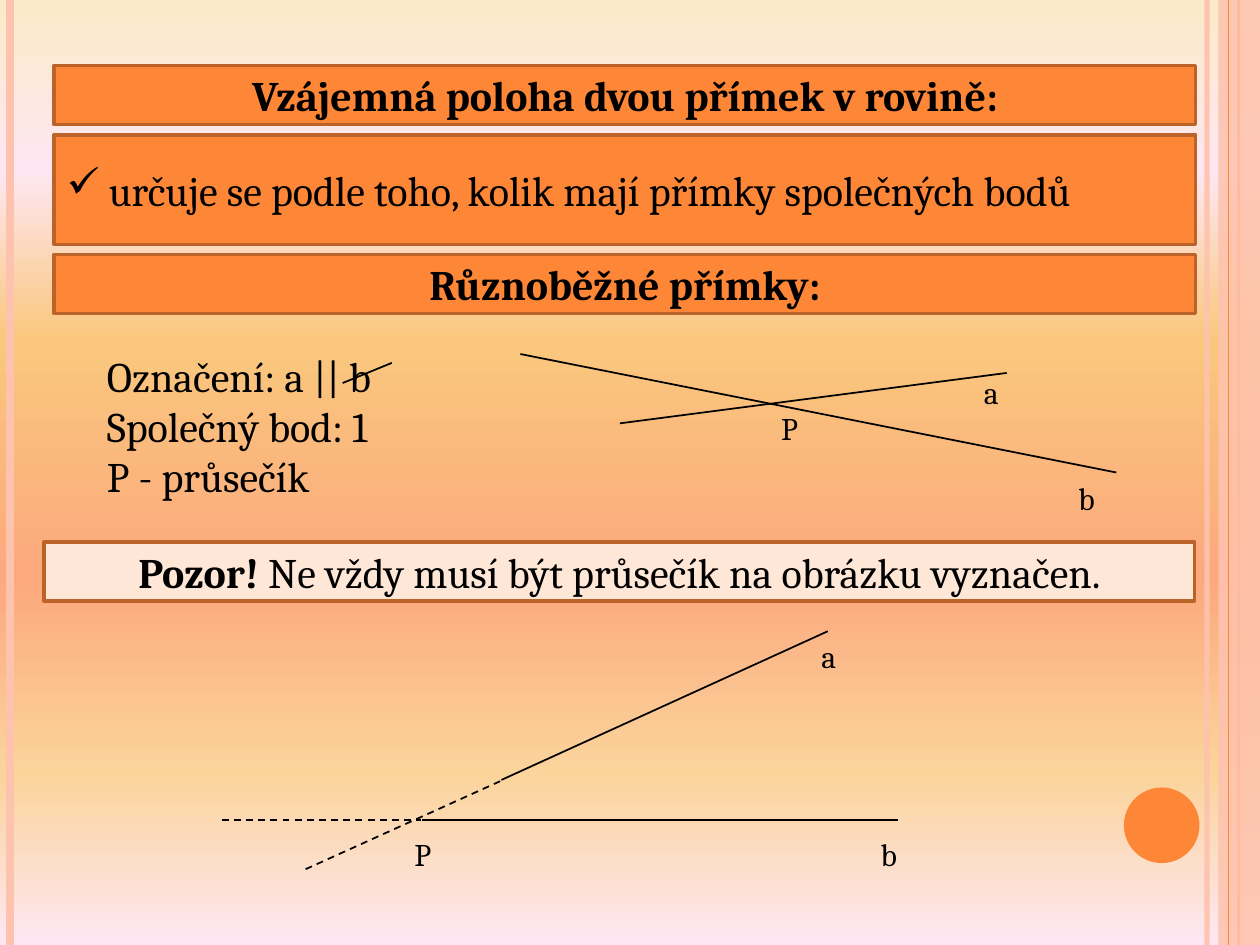
from lxml.etree import SubElement
from pptx import Presentation
from pptx.dml.color import RGBColor
from pptx.enum.dml import MSO_LINE
from pptx.enum.shapes import MSO_CONNECTOR, MSO_SHAPE
from pptx.enum.text import MSO_ANCHOR, MSO_AUTO_SIZE, PP_ALIGN
from pptx.oxml.ns import qn
from pptx.util import Inches, Pt

FONT = "Cambria"
COLORS = {"orange": "FE8637", "brown": "BC6329", "peach": "FEC3AE",
          "pale": "FFE7D7", "black": "000000"}
STOPS = [(0, "FBEAC7"), (18, "FEE7F2"), (36, "FAC77D"),
         (61, "FBA97D"), (82, "FBD49C"), (100, "FEE7F2")]


def rgb(name):
    return RGBColor.from_string(COLORS[name])


def fade(fill, percent):
    """Set the opacity of a solid fill already on the element."""
    color = next(fill.iter(qn("a:srgbClr")))
    SubElement(color, qn("a:alpha")).set("val", str(percent * 1000))


def backdrop(slide):
    fill = slide.background.fill
    fill.gradient()
    fill.gradient_angle = 270
    stops = next(slide.element.iter(qn("a:gsLst")))
    for old in list(stops):
        stops.remove(old)
    for place, color in STOPS:
        stop = SubElement(stops, qn("a:gs"), pos=str(place * 1000))
        SubElement(stop, qn("a:srgbClr"), val=color)


def line(slide, x1, y1, x2, y2, color="black", width=1, dash=False, alpha=None):
    link = slide.shapes.add_connector(
        MSO_CONNECTOR.STRAIGHT, Inches(x1), Inches(y1), Inches(x2), Inches(y2))
    link.line.color.rgb = rgb(color)
    link.line.width = Pt(width)
    if dash:
        link.line.dash_style = MSO_LINE.DASH
    props = link.element.spPr
    if alpha:
        fade(props, alpha)
    SubElement(props, qn("a:effectLst"))


def shape(slide, kind, x, y, w, h, color):
    item = slide.shapes.add_shape(kind, Inches(x), Inches(y), Inches(w), Inches(h))
    item.shadow.inherit = False
    item.fill.solid()
    item.fill.fore_color.rgb = rgb(color)
    item.line.fill.background()
    return item


def write(para, runs, size):
    for text, bold in runs:
        run = para.add_run()
        run.text = text
        run.font.name = FONT
        run.font.size = Pt(size)
        run.font.bold = bold
        run.font.color.rgb = rgb("black")


def banner(item, runs, align=PP_ALIGN.CENTER):
    """Outline a box and write one line of text in its middle."""
    item.line.color.rgb = rgb("brown")
    item.line.width = Pt(2)
    frame = item.text_frame
    frame.word_wrap = True
    frame.auto_size = MSO_AUTO_SIZE.NONE
    frame.vertical_anchor = MSO_ANCHOR.MIDDLE
    para = frame.paragraphs[0]
    para.alignment = align
    write(para, runs, 24)
    return para


def title(slide, x, y, w, h, text):
    head = slide.shapes.title
    head.left, head.top = Inches(x), Inches(y)
    head.width, head.height = Inches(w), Inches(h)
    head.fill.solid()
    head.fill.fore_color.rgb = rgb("orange")
    banner(head, [(text, True)])


def label(slide, x, y, w, h, lines, size=18):
    box = slide.shapes.add_textbox(Inches(x), Inches(y), Inches(w), Inches(h))
    frame = box.text_frame
    frame.word_wrap = True
    frame.auto_size = MSO_AUTO_SIZE.SHAPE_TO_FIT_TEXT
    for i, text in enumerate(lines):
        para = frame.add_paragraph() if i else frame.paragraphs[0]
        write(para, [(text, False)], size)


def frame_art(slide):
    # Vertical stripes at the edges and the round mark
    line(slide, 9.58, 0, 9.58, 7.5, "peach", 3, alpha=93)
    line(slide, 0.08, 0, 0.08, 7.5, "peach", 4.5)
    line(slide, 9.83, 0, 9.83, 7.5, "orange", 1.5)
    band = shape(slide, MSO_SHAPE.RECTANGLE, 9.67, 0, 0.33, 7.5, "peach")
    fade(band.element.spPr, 87)
    line(slide, 9.75, 0, 9.75, 7.5, "orange", 0.75)
    shape(slide, MSO_SHAPE.OVAL, 8.92, 6.25, 0.6, 0.6, "orange")


def main():
    deck = Presentation()
    deck.slide_width, deck.slide_height = Inches(10), Inches(7.5)
    slide = deck.slides.add_slide(deck.slide_layouts[5])
    backdrop(slide)
    frame_art(slide)

    # Headings and the rule
    rect = MSO_SHAPE.RECTANGLE
    title(slide, 0.43, 0.52, 9.06, 0.47, "Vzájemná poloha dvou přímek v rovině:")
    rule = banner(
        shape(slide, rect, 0.43, 1.07, 9.06, 0.87, "orange"),
        [(" určuje se podle toho, kolik mají přímky společných bodů", False)],
        PP_ALIGN.LEFT)
    SubElement(rule._p.get_or_add_pPr(), qn("a:buChar"), char="✓")
    banner(shape(slide, rect, 0.43, 2.02, 9.06, 0.47, "orange"),
           [("Různoběžné přímky:", True)])

    # Crossing lines with a marked point
    line(slide, 4.13, 2.81, 8.86, 3.75)
    line(slide, 7.99, 2.96, 4.92, 3.36)
    label(slide, 7.71, 2.91, 0.47, 0.4, ["a"])
    label(slide, 8.46, 3.75, 0.63, 0.4, ["b"])
    label(slide, 6.1, 3.2, 0.31, 0.4, ["P"])

    # Notation, with a stroke through the parallel sign
    label(slide, 0.75, 2.73, 3.15, 1.31,
          ["Označení: a || b", "Společný bod: 1", "P - průsečík"], 24)
    line(slide, 2.72, 3.04, 3.11, 2.88)

    # Warning
    banner(shape(slide, rect, 0.35, 4.3, 9.13, 0.47, "pale"),
           [("Pozor! ", True),
            ("Ne vždy musí být průsečík na obrázku vyznačen.", False)])

    # Lines extended to their hidden crossing
    line(slide, 3.35, 6.51, 7.13, 6.51)
    line(slide, 3.98, 6.19, 6.57, 5.01)
    line(slide, 3.97, 6.2, 2.4, 6.91, dash=True)
    line(slide, 1.76, 6.51, 3.34, 6.51, dash=True)
    label(slide, 6.42, 5.01, 0.31, 0.4, ["a"])
    label(slide, 6.89, 6.58, 0.47, 0.4, ["b"])
    label(slide, 3.19, 6.58, 0.39, 0.4, ["P"])

    deck.save("out.pptx")


if __name__ == "__main__":
    main()
